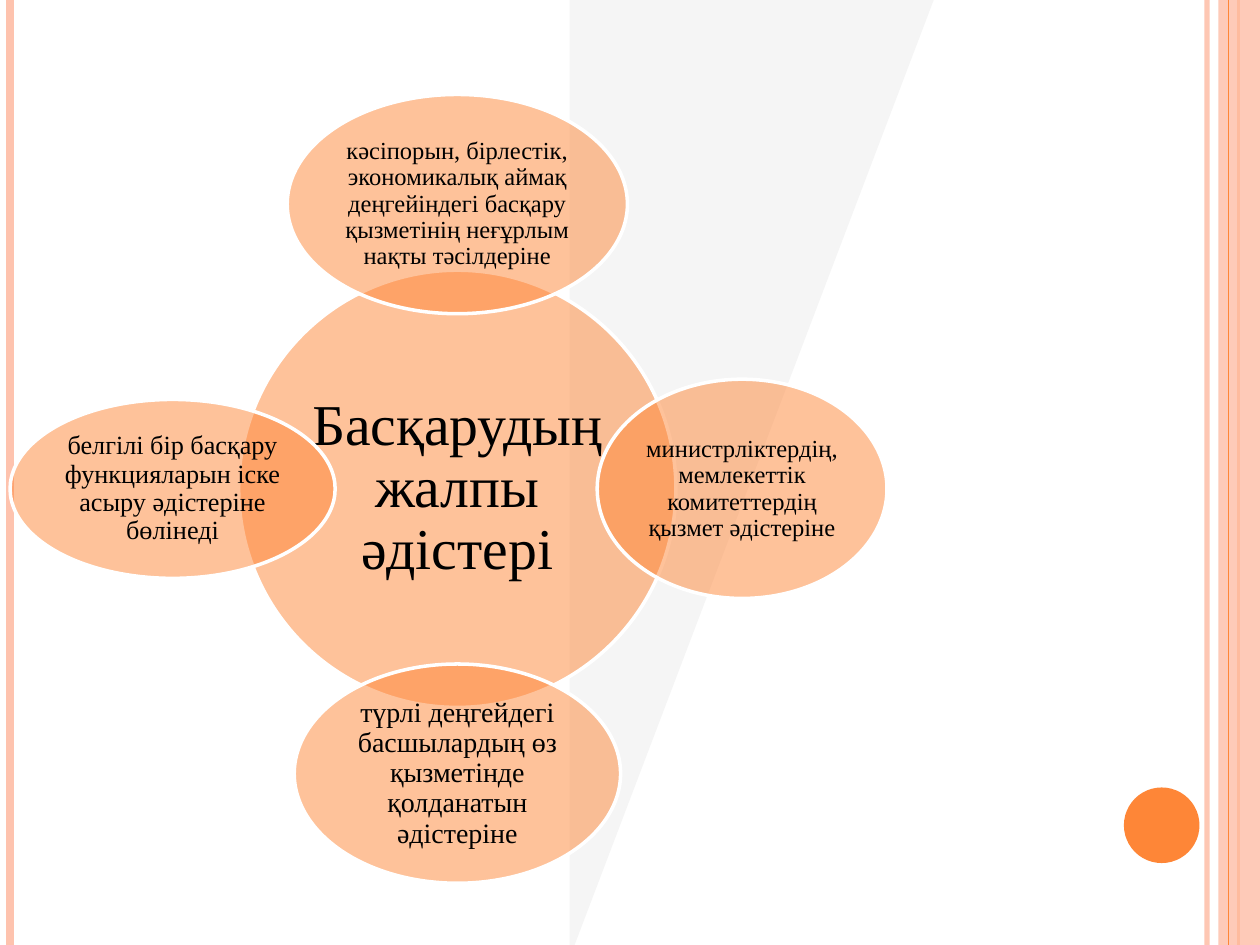
import math
from dataclasses import dataclass

import lxml.etree
import pptx
import pptx.dml.color
import pptx.enum.shapes
import pptx.enum.text
import pptx.oxml.ns
import pptx.util

Inches = pptx.util.Inches
Pt = pptx.util.Pt
qn = pptx.oxml.ns.qn
SHAPE = pptx.enum.shapes.MSO_SHAPE


@dataclass(frozen=True)
class Theme:
    accent: str = "FE8637"
    pale: str = "FEC3AE"
    grey: str = "F2F2F2"
    white: str = "FFFFFF"
    text: str = "000000"
    font: str = "Times New Roman"
    hub_size: float = 33
    large: float = 16
    medium: float = 15
    small: float = 14
    outline: float = 2


def rgb(value):
    return pptx.dml.color.RGBColor.from_string(value)


def set_alpha(fill_parent, percent):
    """Make the solid fill directly under fill_parent partly transparent."""
    color = fill_parent.find(qn("a:solidFill")).find(qn("a:srgbClr"))
    alpha = lxml.etree.SubElement(color, qn("a:alpha"))
    alpha.set("val", str(percent * 1000))


class SlideBuilder:
    def __init__(self, slide, theme):
        self.slide = slide
        self.theme = theme

    def paint(self, sp, color, alpha=100):
        sp.shadow.inherit = False
        sp.fill.solid()
        sp.fill.fore_color.rgb = rgb(color)
        sp.line.fill.background()
        if alpha < 100:
            set_alpha(sp._element.spPr, alpha)
        return sp

    def shape(self, kind, x, y, w, h, color, alpha=100):
        sp = self.slide.shapes.add_shape(
            kind, Inches(x), Inches(y), Inches(w), Inches(h))
        return self.paint(sp, color, alpha)

    def vertical_line(self, x, color, width, alpha=100):
        line = self.slide.shapes.add_connector(
            pptx.enum.shapes.MSO_CONNECTOR.STRAIGHT,
            Inches(x), 0, Inches(x), Inches(7.5))
        line.line.color.rgb = rgb(color)
        line.line.width = Pt(width)
        sppr = line._element.spPr
        if alpha < 100:
            set_alpha(sppr.find(qn("a:ln")), alpha)
        lxml.etree.SubElement(sppr, qn("a:effectLst"))

    def polygon(self, points, color, alpha):
        corners = [(Inches(x), Inches(y)) for x, y in points]
        builder = self.slide.shapes.build_freeform(*corners[0])
        builder.add_line_segments(corners[1:], close=True)
        self.paint(builder.convert_to_shape(), color, alpha)

    def bubble(self, cx, cy, w, h, text, size, inset=0.02):
        """Draw a translucent labelled ellipse centred on (cx, cy)."""
        sp = self.shape(SHAPE.OVAL, cx - w / 2, cy - h / 2, w, h,
                        self.theme.accent, 50)
        sp.line.color.rgb = rgb(self.theme.white)
        sp.line.width = Pt(self.theme.outline)
        tf = sp.text_frame
        frame_format = {
            "word_wrap": True,
            "vertical_anchor": pptx.enum.text.MSO_ANCHOR.MIDDLE,
            **{f"margin_{side}": Inches(inset)
               for side in ("left", "right", "top", "bottom")},
        }
        for name, value in frame_format.items():
            setattr(tf, name, value)
        p = tf.paragraphs[0]
        p.alignment = pptx.enum.text.PP_ALIGN.CENTER
        p.line_spacing = 0.9
        r = p.add_run()
        r.text = text
        for name, value in {"name": self.theme.font, "size": Pt(size)}.items():
            setattr(r.font, name, value)
        r.font.color.rgb = rgb(self.theme.text)


def add_decoration(s, theme):
    s.vertical_line(9.58, theme.pale, 3, 93)
    s.vertical_line(0.08, theme.pale, 4.5)
    s.vertical_line(9.83, theme.accent, 1.5)
    s.shape(SHAPE.RECTANGLE, 9.67, 0, 0.33, 7.5, theme.pale, 87)
    s.vertical_line(9.75, theme.accent, 0.75)
    s.shape(SHAPE.OVAL, 8.92, 6.25, 0.6, 0.6, theme.accent)
    s.polygon([(4.52, 0), (7.41, 0), (4.56, 7.5), (4.52, 7.5)], theme.grey, 77)


def add_radial_diagram(s, theme):
    cx, cy, radius = 3.63, 3.88, 2.26
    s.bubble(cx, cy, 3.47, 3.47, "Басқарудың жалпы әдістері",
             theme.hub_size, inset=0.05)
    # Clockwise from the top: width, height, type size, text
    satellites = [
        (2.7, 1.74, theme.small,
         "кәсіпорын, бірлестік, экономикалық аймақ деңгейіндегі басқару "
         "қызметінің неғұрлым нақты тәсілдеріне"),
        (2.3, 1.74, theme.small,
         "министрліктердің, мемлекеттік комитеттердің қызмет әдістеріне"),
        (2.59, 1.74, theme.large,
         "түрлі деңгейдегі басшылардың өз қызметінде қолданатын әдістеріне"),
        (2.58, 1.42, theme.medium,
         "белгілі бір басқару функцияларын іске асыру әдістеріне бөлінеді"),
    ]
    for i, (w, h, size, text) in enumerate(satellites):
        angle = math.tau * i / len(satellites)
        s.bubble(cx + radius * math.sin(angle), cy - radius * math.cos(angle),
                 w, h, text, size)


def main():
    prs = pptx.Presentation()
    prs.slide_width, prs.slide_height = Inches(10), Inches(7.5)
    theme = Theme()
    s = SlideBuilder(prs.slides.add_slide(prs.slide_layouts[6]), theme)
    add_decoration(s, theme)
    add_radial_diagram(s, theme)
    prs.save("out.pptx")


if __name__ == "__main__":
    main()
